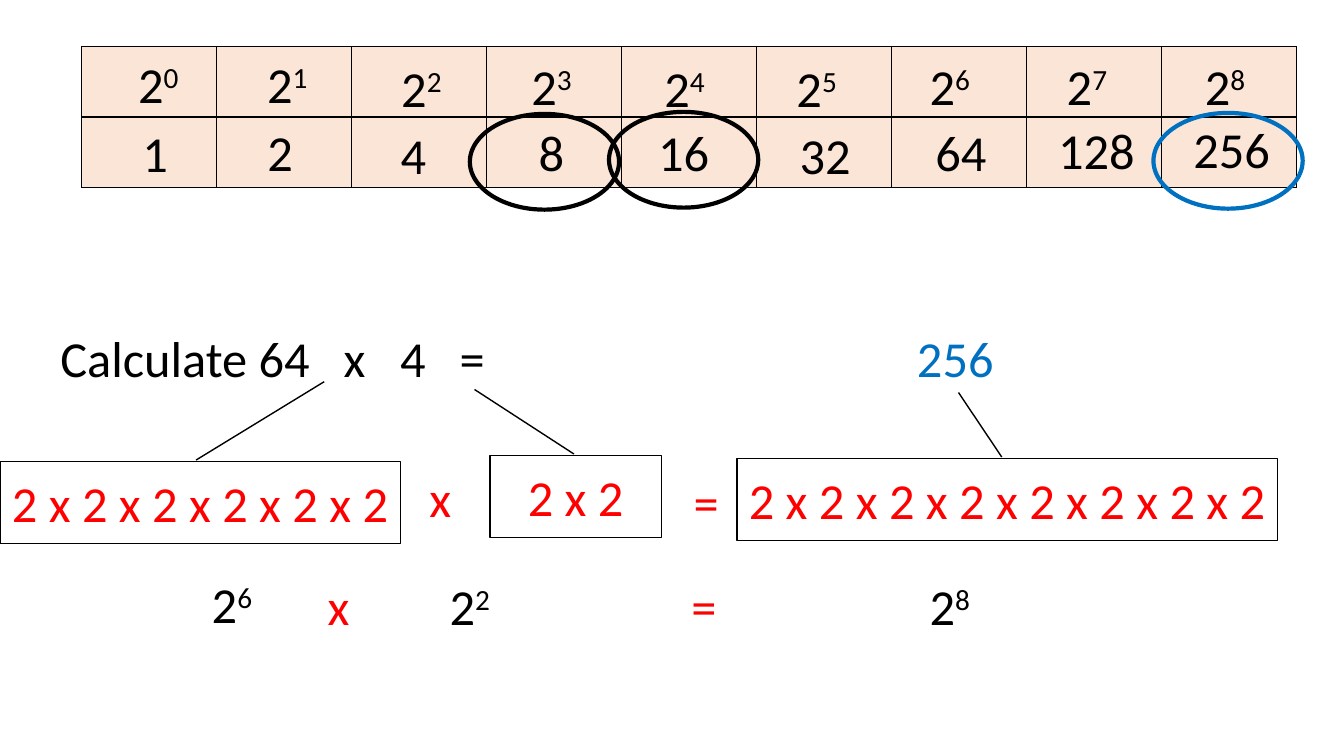
from lxml import etree
from pptx import Presentation
from pptx.dml.color import RGBColor
from pptx.enum.shapes import MSO_SHAPE
from pptx.enum.text import MSO_ANCHOR, PP_ALIGN
from pptx.oxml.ns import qn
from pptx.util import Inches, Pt

BLACK = RGBColor(0x00, 0x00, 0x00)
WHITE = RGBColor(0xFF, 0xFF, 0xFF)
RED = RGBColor(0xFF, 0x00, 0x00)
BLUE = RGBColor(0x00, 0x70, 0xC0)
PEACH = RGBColor(0xFB, 0xE5, 0xD6)

LABEL_W, SIGN_W, TEXT_H = 0.74, 0.38, 0.71

# Left, top and width of each label, relative to the table
POWERS = [(0.39, 0.02), (1.67, 0.02), (3.0, 0.06), (4.29, 0.04), (5.61, 0.06),
          (6.92, 0.06), (8.24, 0.04), (9.6, 0.04), (10.97, 0.04)]
VALUES = [(0.36, 0.7, LABEL_W), (1.6, 0.69, LABEL_W), (2.92, 0.72, LABEL_W),
          (4.29, 0.69, LABEL_W), (5.6, 0.69, LABEL_W), (6.86, 0.72, 1.03),
          (8.23, 0.69, 0.98), (9.38, 0.67, 1.37), (10.68, 0.66, 1.45)]
RINGS = [(3.85, 0.67, BLACK), (5.23, 0.65, BLACK), (10.63, 0.66, BLUE)]


def style(p, color, align):
    p.alignment = align
    p.font.name = "Calibri"
    p.font.size = Pt(36)
    p.font.color.rgb = color


def add_text(s, text, x, y, w=LABEL_W, color=BLACK, align=PP_ALIGN.CENTER):
    """Add one line of text; what follows ^ is raised."""
    tb = s.shapes.add_textbox(Inches(x), Inches(y), Inches(w), Inches(TEXT_H))
    tf = tb.text_frame
    tf.word_wrap = True
    p = tf.paragraphs[0]
    style(p, color, align)
    base, _, exponent = text.partition("^")
    p.add_run().text = base
    if exponent:
        r = p.add_run()
        r.text = exponent
        r._r.get_or_add_rPr().set("baseline", "30000")
    return p


def add_sign(s, text, x, y):
    add_text(s, text, x, y, SIGN_W, RED, PP_ALIGN.LEFT)


def add_tab_stops(p, stops):
    tabs = etree.SubElement(p._p.get_or_add_pPr(), qn("a:tabLst"))
    # The tab list comes before the default run properties
    tabs.getparent().insert(0, tabs)
    for stop in stops:
        etree.SubElement(tabs, qn("a:tab"), pos=str(Inches(stop)), algn="l")


def add_borders(cell):
    tc_pr = cell._tc.get_or_add_tcPr()
    for side in ("lnL", "lnR", "lnT", "lnB"):
        ln = etree.SubElement(tc_pr, qn(f"a:{side}"), w=str(Pt(1)))
        fill = etree.SubElement(ln, qn("a:solidFill"))
        etree.SubElement(fill, qn("a:srgbClr"), val=str(BLACK))


def add_callout(s, text, x, y, w, adjustments):
    sp = s.shapes.add_shape(MSO_SHAPE.LINE_CALLOUT_1, Inches(x), Inches(y),
                            Inches(w), Inches(0.81))
    sp.shadow.inherit = False
    for i, value in enumerate(adjustments):
        sp.adjustments[i] = value
    sp.fill.solid()
    sp.fill.fore_color.rgb = WHITE
    sp.line.color.rgb = BLACK
    sp.line.width = Pt(1)
    tf = sp.text_frame
    tf.word_wrap = True
    tf.vertical_anchor = MSO_ANCHOR.MIDDLE
    tf.text = text
    style(tf.paragraphs[0], RED, PP_ALIGN.CENTER)


def add_powers_table(s, x, y, w, h):
    # Grid
    table = s.shapes.add_table(2, len(POWERS), Inches(x), Inches(y),
                               Inches(w), Inches(h)).table
    table.first_row = table.horz_banding = False
    for cell in table.iter_cells():
        add_borders(cell)
        cell.fill.solid()
        cell.fill.fore_color.rgb = PEACH

    # Powers above their values
    for n, (dx, dy) in enumerate(POWERS):
        add_text(s, f"2^{n}", x + dx, y + dy)
    for n, (dx, dy, width) in enumerate(VALUES):
        add_text(s, str(2 ** n), x + dx, y + dy, width)

    # Rings
    for dx, dy, color in RINGS:
        ring = s.shapes.add_shape(MSO_SHAPE.FLOWCHART_CONNECTOR, Inches(x + dx),
                                  Inches(y + dy), Inches(1.48), Inches(0.95))
        ring.shadow.inherit = False
        ring.fill.background()
        ring.line.color.rgb = color
        ring.line.width = Pt(3)


def add_calculation(s, x, y, w):
    # Question and answer
    p = add_text(s, "Calculate 64\tx\t4\t=", x + 0.5, y, w - 1.5,
                 align=PP_ALIGN.LEFT)
    add_tab_stops(p, (2.81, 3.37, 3.96))
    add_text(s, "256", x + 8.7, y, 1.55, BLUE)

    # Factors
    for count, dx, dy, width, adjustments in (
            (6, 0, 1.38, 3.97, (-0.02, 0.49, -0.98, 0.81)),
            (2, 4.86, 1.32, 1.7, (-0.02, 0.49, -0.81, -0.09)),
            (8, 7.31, 1.35, 5.36, (-0.02, 0.49, -0.81, 0.41))):
        add_callout(s, " x ".join("2" * count), x + dx, y + dy, width, adjustments)
    add_sign(s, "x", x + 4.16, y + 1.38)
    add_sign(s, "=", x + 6.78, y + 1.42)

    # Powers
    for text, dx, dy in (("2^6", 1.93, 2.44), ("2^2", 4.29, 2.46), ("2^8", 9.05, 2.46)):
        add_text(s, text, x + dx, y + dy)
    add_sign(s, "x", x + 3.15, y + 2.46)
    add_sign(s, "=", x + 6.76, y + 2.46)


def main():
    prs = Presentation()
    prs.slide_width, prs.slide_height = Inches(13.33), Inches(7.5)
    s = prs.slides.add_slide(prs.slide_layouts[6])
    add_powers_table(s, 0.81, 0.46, 12.05, 1.4)
    add_calculation(s, 0, 3.2, 13.33)
    prs.save("out.pptx")


if __name__ == "__main__":
    main()
